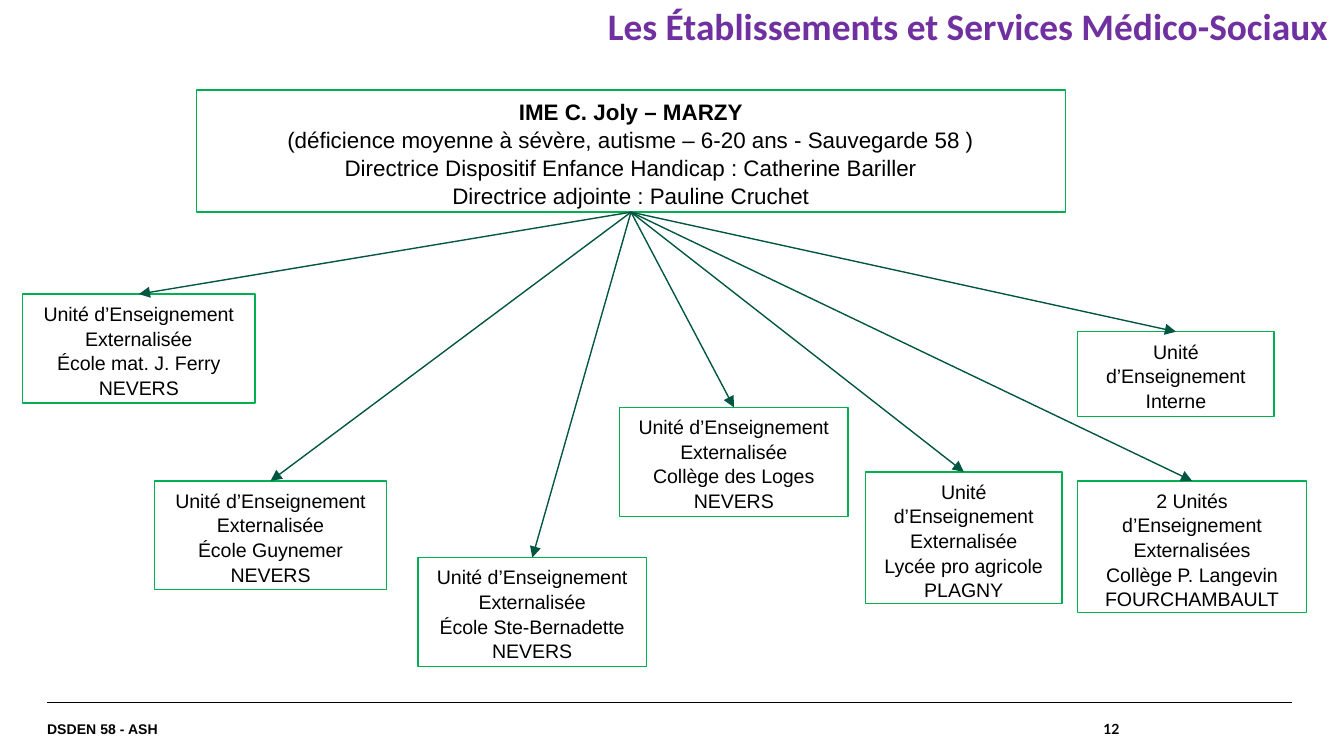
from collections import namedtuple
from dataclasses import dataclass

from lxml import etree
from pptx import Presentation
from pptx.dml.color import RGBColor
from pptx.enum import shapes, text
from pptx.oxml import ns
from pptx.util import Cm, Pt

Box = namedtuple("Box", "x y w h")


@dataclass(frozen=True)
class Theme:
    """Colours, fonts, type sizes and line widths of the slide."""
    ink: str = "000000"
    title: str = "7030A0"
    frame: str = "00B050"
    arrow: str = "005640"
    body_font: str = "Arial"
    title_font: str = "Calibri"
    number_font: str = "Lato"
    title_size: float = 20
    school_size: float = 12
    unit_size: float = 10.5
    footer_size: float = 7.5
    thin: float = 0.75
    rule: float = 0.8
    leading: float = 1.05


T = Theme()
EXTERNAL = "Unité d’Enseignement Externalisée"
SCHOOL = [
    "IME C. Joly – MARZY",
    "(déficience moyenne à sévère, autisme – 6-20 ans - Sauvegarde 58 )",
    "Directrice Dispositif Enfance Handicap : Catherine Bariller",
    "Directrice adjointe : Pauline Cruchet",
]
UNITS = [
    (Box(0, 3.86, 4.39, 2.06), [EXTERNAL, "École mat. J. Ferry", "NEVERS"]),
    (Box(2.49, 7.39, 4.39, 2.06), [EXTERNAL, "École Guynemer", "NEVERS"]),
    (Box(7.47, 8.84, 4.32, 2.06), [EXTERNAL, "École Ste-Bernadette", "NEVERS"]),
    (Box(11.28, 6, 4.32, 2.06), [EXTERNAL, "Collège des Loges", "NEVERS"]),
    (Box(15.93, 7.22, 3.71, 2.49), [EXTERNAL, "Lycée pro agricole", "PLAGNY"]),
    (Box(19.94, 7.39, 4.32, 2.49),
     ["2 Unités d’Enseignement Externalisées", "Collège P. Langevin", "FOURCHAMBAULT"]),
    (Box(19.94, 4.57, 3.71, 1.6), ["Unité d’Enseignement Interne"]),
]


def cm(box):
    """Convert a box in centimetres to slide lengths."""
    return [Cm(v) for v in box]


def within(outer, box):
    """Shift a relative box into the outer one."""
    return box._replace(x=outer.x + box.x, y=outer.y + box.y)


def style(p, size, font, color=T.ink, bold=False, align=None, leading=None):
    """Format a paragraph and its runs."""
    p.alignment = align
    p.line_spacing = leading
    for r in p.runs:
        r.font.size = Pt(size)
        r.font.name = font
        r.font.bold = bold
        r.font.color.rgb = RGBColor.from_string(color)


def clear_margins(tf):
    """Remove the insets of a text frame and centre it vertically."""
    tf.margin_left = tf.margin_top = tf.margin_right = tf.margin_bottom = 0
    tf.vertical_anchor = text.MSO_ANCHOR.MIDDLE
    tf.word_wrap = True


def add_title(s, box):
    """Place the slide title in its placeholder."""
    sp = s.shapes.title
    sp.left, sp.top, sp.width, sp.height = cm(box)
    tf = sp.text_frame
    tf.text = "Les Établissements et Services Médico-Sociaux"
    clear_margins(tf)
    tf.auto_size = text.MSO_AUTO_SIZE.NONE
    style(tf.paragraphs[0], T.title_size, T.title_font, T.title, True,
          text.PP_ALIGN.RIGHT, 0.9)


def add_card(s, box, lines, size, bold_first=False):
    """Draw a framed card of centred lines."""
    sp = s.shapes.add_shape(shapes.MSO_SHAPE.RECTANGLE, *cm(box))
    sp.shadow.inherit = False
    sp.fill.background()
    sp.line.color.rgb = RGBColor.from_string(T.frame)
    sp.line.width = Pt(T.thin)
    tf = sp.text_frame
    tf.word_wrap = True
    tf.vertical_anchor = text.MSO_ANCHOR.TOP
    tf.text = "\n".join(lines)
    tf.auto_size = text.MSO_AUTO_SIZE.SHAPE_TO_FIT_TEXT
    for i, p in enumerate(tf.paragraphs):
        style(p, size, T.body_font, bold=bold_first and i == 0,
              align=text.PP_ALIGN.CENTER, leading=T.leading)
    return sp


def add_line(s, start, end, color, width):
    """Draw a straight line without shadow."""
    c = s.shapes.add_connector(shapes.MSO_CONNECTOR.STRAIGHT, *cm(start + end))
    c.line.color.rgb = RGBColor.from_string(color)
    c.line.width = Pt(width)
    etree.SubElement(c._element.spPr, ns.qn("a:effectLst"))
    return c


def add_arrow(s, source, target):
    """Link the bottom of one card to the top of another."""
    c = add_line(s, (0, 0), (1, 1), T.arrow, T.thin)
    c.begin_connect(source, 2)
    c.end_connect(target, 0)
    etree.SubElement(c.line._get_or_add_ln(), ns.qn("a:tailEnd"), type="triangle")


def add_chart_of_units(s, box):
    """Draw the school and the teaching units that depend on it."""
    school = add_card(s, within(box, Box(3.28, 0, 16.43, 2.31)), SCHOOL,
                      T.school_size, True)
    for place, lines in UNITS:
        unit = add_card(s, within(box, place), lines, T.unit_size)
        add_arrow(s, school, unit)


def add_footer(s, box):
    """Draw the footer rule, the department and the page number."""
    add_line(s, (box.x, box.y), (box.x + box.w, box.y), T.ink, T.rule)
    parts = [
        (Box(0, 0, 16.2, box.h), "DSDEN 58 - ASH", T.body_font, text.PP_ALIGN.LEFT),
        (Box(16.51, 0, 3.76, box.h), "12", T.number_font, text.PP_ALIGN.RIGHT),
    ]
    for place, words, font, align in parts:
        tf = s.shapes.add_textbox(*cm(within(box, place))).text_frame
        tf.text = words
        clear_margins(tf)
        style(tf.paragraphs[0], T.footer_size, font, bold=True, align=align)


def main():
    """Build and save the presentation."""
    prs = Presentation()
    prs.slide_width, prs.slide_height = Cm(25.4), Cm(14.29)
    s = prs.slides.add_slide(prs.slide_layouts[5])
    add_title(s, Box(9.91, 0.15, 15.19, 0.79))
    add_chart_of_units(s, Box(0.43, 1.7, 24.26, 10.9))
    add_footer(s, Box(0.89, 13.28, 23.52, 0.99))
    prs.save("out.pptx")


if __name__ == "__main__":
    main()
